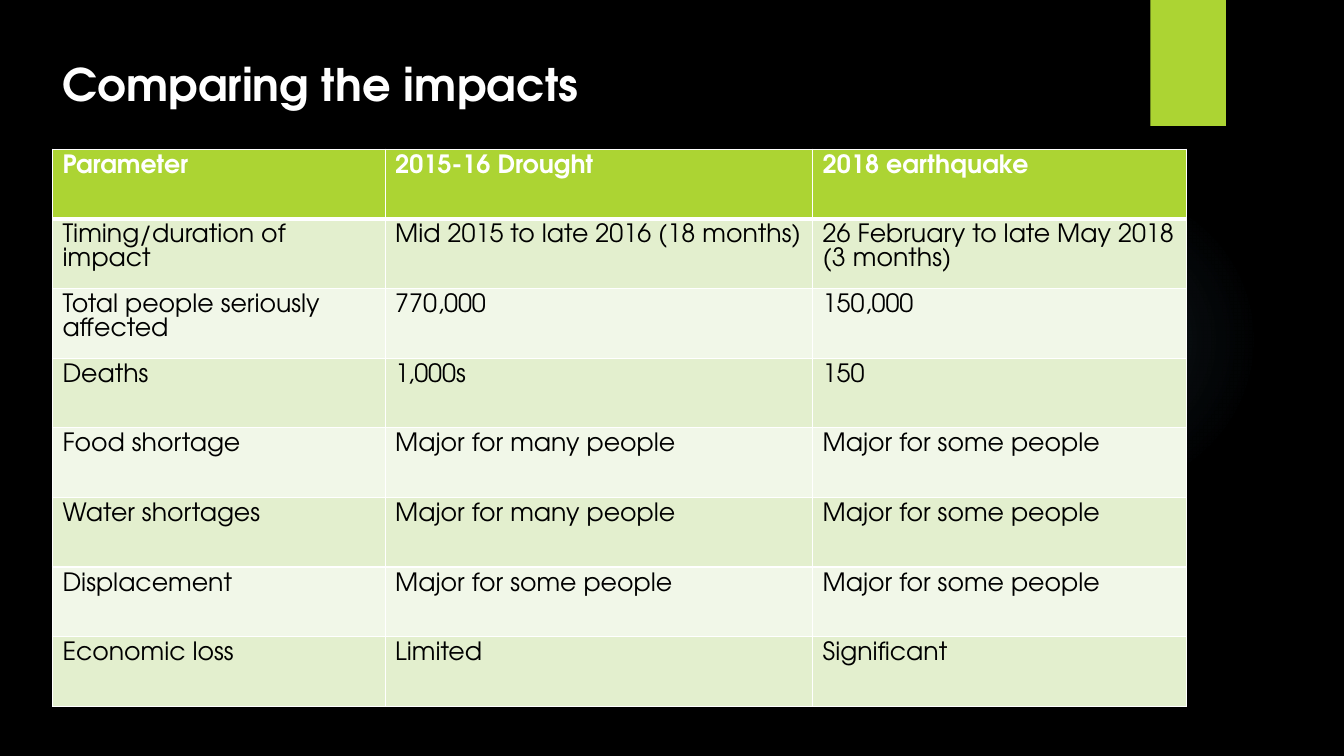
"""Build the slide that compares the impacts of a drought and an earthquake."""
import pptx
import pptx.dml.color
import pptx.enum.shapes
import pptx.enum.text
import pptx.oxml
import pptx.oxml.ns
import pptx.util

Inches, Pt = pptx.util.Inches, pptx.util.Pt
RGBColor = pptx.dml.color.RGBColor
SHAPE = pptx.enum.shapes.MSO_SHAPE

TITLE = "Comparing the impacts"
ROWS = [
    ("Parameter", "2015-16 Drought", "2018 earthquake"),
    ("Timing/duration of impact", "Mid 2015 to late 2016 (18 months)",
     "26 February to late May 2018\n(3 months)"),
    ("Total people seriously affected", "770,000", "150,000"),
    ("Deaths", "1,000s", "150"),
    ("Food shortage", "Major for many people", "Major for some people"),
    ("Water shortages", "Major for many people", "Major for some people"),
    ("Displacement", "Major for some people", "Major for some people"),
    ("Economic loss", "Limited", "Significant"),
]
COL_WIDTHS = (3.3, 4.24, 3.71)
TABLE_HEIGHT = 5.53
GLOW_STOPS = ((0, 7), (36, 6), (69, 0))

FONT = "TeX Gyre Adventor"
BLACK = RGBColor(0x00, 0x00, 0x00)
WHITE = RGBColor(0xFF, 0xFF, 0xFF)
LIME = RGBColor(0xAC, 0xD4, 0x33)
BANDS = (RGBColor(0xF1, 0xF7, 0xE8), RGBColor(0xE3, 0xEF, 0xCE))
GLOW = RGBColor(0x7A, 0xC4, 0xF0)


def add_text(p, text, size, color, bold, pitch):
    """Add one formatted run and set the line pitch."""
    p.line_spacing = Pt(pitch)
    r = p.add_run()
    r.text = text
    r.font.name = FONT
    r.font.size = Pt(size)
    r.font.bold = bold
    r.font.color.rgb = color


def add_plain_shape(s, kind, left, top, width, height):
    """Add a preset shape without line or shadow."""
    sp = s.shapes.add_shape(kind, Inches(left), Inches(top), Inches(width), Inches(height))
    sp.shadow.inherit = False
    sp.line.fill.background()
    return sp


def set_glow(sp):
    """Fill a shape with a faint radial gradient."""
    stops = "".join(
        f'<a:gs pos="{pos * 1000}"><a:srgbClr val="{GLOW}">'
        f'<a:alpha val="{alpha * 1000}"/></a:srgbClr></a:gs>'
        for pos, alpha in GLOW_STOPS)
    sp.fill.background()
    old = sp._element.spPr.find(pptx.oxml.ns.qn("a:noFill"))
    grad = pptx.oxml.parse_xml(
        f'<a:gradFill {pptx.oxml.ns.nsdecls("a")}><a:gsLst>{stops}</a:gsLst>'
        '<a:path path="circle"><a:fillToRect l="50000" t="50000" r="50000" b="50000"/>'
        '</a:path></a:gradFill>')
    sp._element.spPr.replace(old, grad)


def set_borders(cell, top, bottom):
    """Draw white borders with the given top and bottom widths in points."""
    tcPr = cell._tc.get_or_add_tcPr()
    for i, (side, width) in enumerate((("L", 1), ("R", 1), ("T", top), ("B", bottom))):
        tcPr.insert(i, pptx.oxml.parse_xml(
            f'<a:ln{side} {pptx.oxml.ns.nsdecls("a")} w="{Pt(width)}"><a:solidFill>'
            f'<a:srgbClr val="{WHITE}"/></a:solidFill></a:ln{side}>'))


def add_title(s):
    """Place and fill the title placeholder."""
    sp = s.shapes.title
    sp.left, sp.top, sp.width, sp.height = map(Inches, (0.52, 0.5, 11.69, 2.56))
    tf = sp.text_frame
    tf.word_wrap = True
    tf.auto_size = pptx.enum.text.MSO_AUTO_SIZE.NONE
    tf.vertical_anchor = pptx.enum.text.MSO_ANCHOR.TOP
    p = tf.paragraphs[0]
    p.alignment = pptx.enum.text.PP_ALIGN.LEFT
    add_text(p, TITLE, 32, WHITE, True, 39)


def add_impacts(s):
    """Add the banded table of impacts."""
    table = s.shapes.add_table(
        len(ROWS), len(COL_WIDTHS), Inches(0.52), Inches(1.48),
        Inches(sum(COL_WIDTHS)), Inches(TABLE_HEIGHT)).table
    for column, width in zip(table.columns, COL_WIDTHS):
        column.width = Inches(width)
    for i, row in enumerate(ROWS):
        header = i == 0
        table.rows[i].height = Inches(TABLE_HEIGHT / len(ROWS))
        for j, text in enumerate(row):
            cell = table.cell(i, j)
            cell.fill.solid()
            cell.fill.fore_color.rgb = LIME if header else BANDS[i % 2]
            set_borders(cell, 3 if i == 1 else 1, 3 if header else 1)
            tf = cell.text_frame
            for k, line in enumerate(text.split("\n")):
                p = tf.add_paragraph() if k else tf.paragraphs[0]
                add_text(p, line, 18, WHITE if header else BLACK, header, 17)


def main():
    """Build and save the presentation."""
    prs = pptx.Presentation()
    prs.slide_width, prs.slide_height = Inches(13.33), Inches(7.5)
    s = prs.slides.add_slide(prs.slide_layouts[5])
    s.background.fill.solid()
    s.background.fill.fore_color.rgb = BLACK
    set_glow(add_plain_shape(s, SHAPE.OVAL, 9.41, 1.83, 3.08, 3.08))
    tab = add_plain_shape(s, SHAPE.RECTANGLE, 11.41, 0, 0.75, 1.25)
    tab.fill.solid()
    tab.fill.fore_color.rgb = LIME
    add_title(s)
    add_impacts(s)
    prs.save("out.pptx")


if __name__ == "__main__":
    main()
